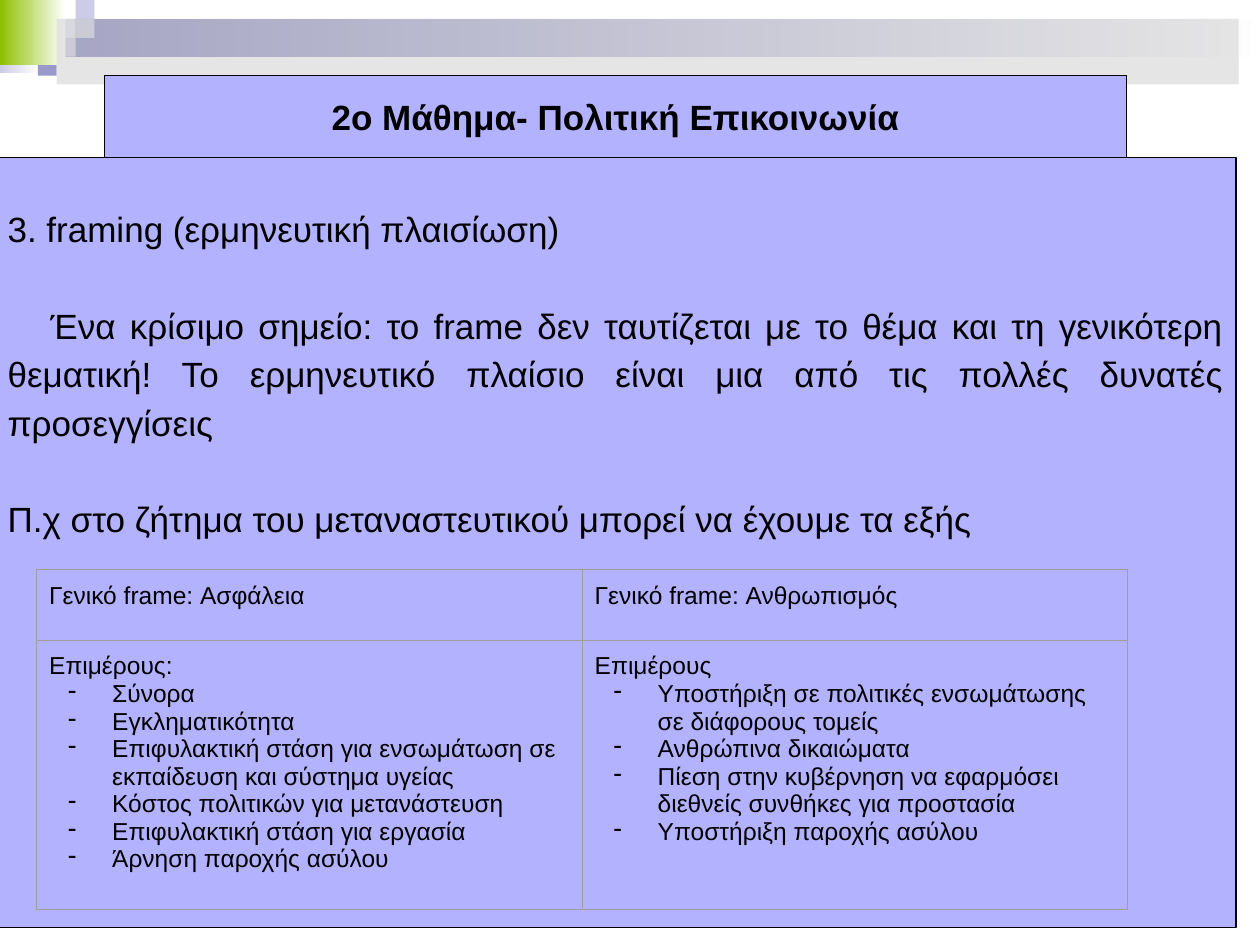
"""Build the framing slide of the political communication course."""
from lxml.etree import SubElement
from pptx import Presentation
from pptx.dml.color import RGBColor
from pptx.enum.shapes import MSO_SHAPE as Shape
from pptx.enum.text import MSO_ANCHOR as Anchor, MSO_AUTO_SIZE as Auto, PP_ALIGN as Align
from pptx.oxml.ns import qn
from pptx.util import Inches, Pt

HUES = {"ink": "000000", "panel": "B2B2FF", "rule": "9E9E9E", "navy": "00007D",
        "pale": "CCCCE6", "mid": "9999CC", "green": "8EC000", "grey": "DDDDDD",
        "white": "FFFFFF"}
TITLE = "2ο Μάθημα- Πολιτική Επικοινωνία"
BODY = [
    ("3. framing (ερμηνευτική πλαισίωση)", 0),
    ("Ένα κρίσιμο σημείο: το frame δεν ταυτίζεται με το θέμα και τη γενικότερη "
     "θεματική! Το ερμηνευτικό πλαίσιο είναι μια από τις πολλές δυνατές προσεγγίσεις", 0.34),
    ("Π.χ στο ζήτημα του μεταναστευτικού μπορεί να έχουμε τα εξής", 0),
]
FRAMES = [
    ("Γενικό frame: Ασφάλεια", "Επιμέρους:", [
        "Σύνορα",
        "Εγκληματικότητα",
        "Επιφυλακτική στάση για ενσωμάτωση σε εκπαίδευση και σύστημα υγείας",
        "Κόστος πολιτικών για μετανάστευση",
        "Επιφυλακτική στάση για εργασία",
        "Άρνηση παροχής ασύλου"]),
    ("Γενικό frame: Ανθρωπισμός", "Επιμέρους", [
        "Υποστήριξη σε πολιτικές ενσωμάτωσης σε διάφορους τομείς",
        "Ανθρώπινα δικαιώματα",
        "Πίεση στην κυβέρνηση να εφαρμόσει διεθνείς συνθήκες για προστασία",
        "Υποστήριξη παροχής ασύλου"]),
]
UNIT = 0.15
TILES = [(3, 1, "pale"), (4, 0, "pale"), (4, 1, "mid"), (2, 2, "pale"),
         (1, 1, "navy"), (3, 2, "mid"), (2, 3, "mid")]
ROWS = [0.56, 2.14]
COL = 4.33
PITCH = Pt(27.6)


def rgb(name):
    return RGBColor.from_string(HUES[name])


def style(para, size, bold=False):
    font = para.font
    font.name, font.size, font.bold = "Arial", Pt(size), bold
    font.color.rgb = rgb("ink")


def place(item, box):
    item.left, item.top, item.width, item.height = map(Inches, box)


def block(slide, box, hue, fade=False):
    item = slide.shapes.add_shape(Shape.RECTANGLE, *map(Inches, box))
    item.shadow.inherit = False
    item.line.fill.background()
    if fade:
        item.fill.gradient()
        item.fill.gradient_angle = 0
        for stop, name in zip(item.fill.gradient_stops, (hue, "white")):
            stop.color.rgb = rgb(name)
    else:
        item.fill.solid()
        item.fill.fore_color.rgb = rgb(hue)
    return item


def panel(item, box):
    place(item, box)
    item.fill.solid()
    item.fill.fore_color.rgb = rgb("panel")
    item.line.color.rgb = rgb("ink")
    item.line.width = Pt(0.75)
    frame = item.text_frame
    frame.auto_size = Auto.NONE
    frame.word_wrap = True
    return frame


def indent(para, left, first, mark=None):
    props = para._p.get_or_add_pPr()
    props.set("marL", str(Inches(left)))
    props.set("indent", str(Inches(first)))
    if mark:
        SubElement(props, qn("a:buChar"), char=mark)
    else:
        SubElement(props, qn("a:buNone"))


def write(frame, lines):
    frame.text = "\n".join(lines)
    return frame.paragraphs


def decor(slide):
    block(slide, (0, 0, 0.31, 0.58), "pale", True)
    block(slide, (3 * UNIT, UNIT, 9.55, 2 * UNIT), "navy", True)
    for col, row, hue in TILES:
        block(slide, (col * UNIT, row * UNIT, UNIT, UNIT), hue)
    block(slide, (0, 0, 0.52, 0.52), "green", True)
    veil = block(slide, (3 * UNIT, UNIT, 9.38, 0.52), "grey")
    tint = veil.element.find(".//" + qn("a:srgbClr"))
    SubElement(tint, qn("a:alpha"), val="75000")


def prose(item):
    frame = panel(item, (-0.04, 1.25, 9.85, 6.11))
    frame.vertical_anchor = Anchor.TOP
    frame.margin_top = Inches(0.35)
    paras = write(frame, [text for text, _ in BODY])
    for row, (para, (_, first)) in enumerate(zip(paras, BODY)):
        para.alignment = Align.JUSTIFY
        para.line_spacing = PITCH
        para.space_before = PITCH if row else Pt(0)
        indent(para, 0, first)
        style(para, 20)


def border(cell):
    props = cell._tc.get_or_add_tcPr()
    for rank, side in enumerate(("lnL", "lnR", "lnT", "lnB")):
        line = props.makeelement(qn("a:" + side), {"w": str(Pt(0.75))})
        fill = SubElement(line, qn("a:solidFill"))
        SubElement(fill, qn("a:srgbClr"), val=HUES["rule"])
        props.insert(rank, line)


def fill_cell(cell, lines):
    cell.fill.background()
    cell.margin_left = cell.margin_right = Inches(0.1)
    cell.margin_top = cell.margin_bottom = Inches(0.1)
    border(cell)
    for row, para in enumerate(write(cell.text_frame, lines)):
        style(para, 14)
        if row:
            indent(para, 0.5, -0.35, "-")


def grid(slide):
    box = (0.29, 4.52, COL * len(FRAMES), sum(ROWS))
    table = slide.shapes.add_table(len(ROWS), len(FRAMES), *map(Inches, box)).table
    table.first_row = table.horz_banding = False
    for row, high in zip(table.rows, ROWS):
        row.height = Inches(high)
    for col, (head, lead, items) in enumerate(FRAMES):
        table.columns[col].width = Inches(COL)
        fill_cell(table.cell(0, col), [head])
        fill_cell(table.cell(1, col), [lead, *items])


def main():
    deck = Presentation()
    deck.slide_width, deck.slide_height = Inches(10), Inches(7.5)
    slide = deck.slides.add_slide(deck.slide_layouts[1])
    title, body = slide.placeholders
    prose(body)
    decor(slide)
    frame = panel(title, (0.83, 0.6, 8.11, 0.65))
    frame.vertical_anchor = Anchor.MIDDLE
    para = write(frame, [TITLE])[0]
    para.alignment = Align.CENTER
    style(para, 20, True)
    title.element.getparent().append(title.element)
    grid(slide)
    deck.save("out.pptx")


if __name__ == "__main__":
    main()
